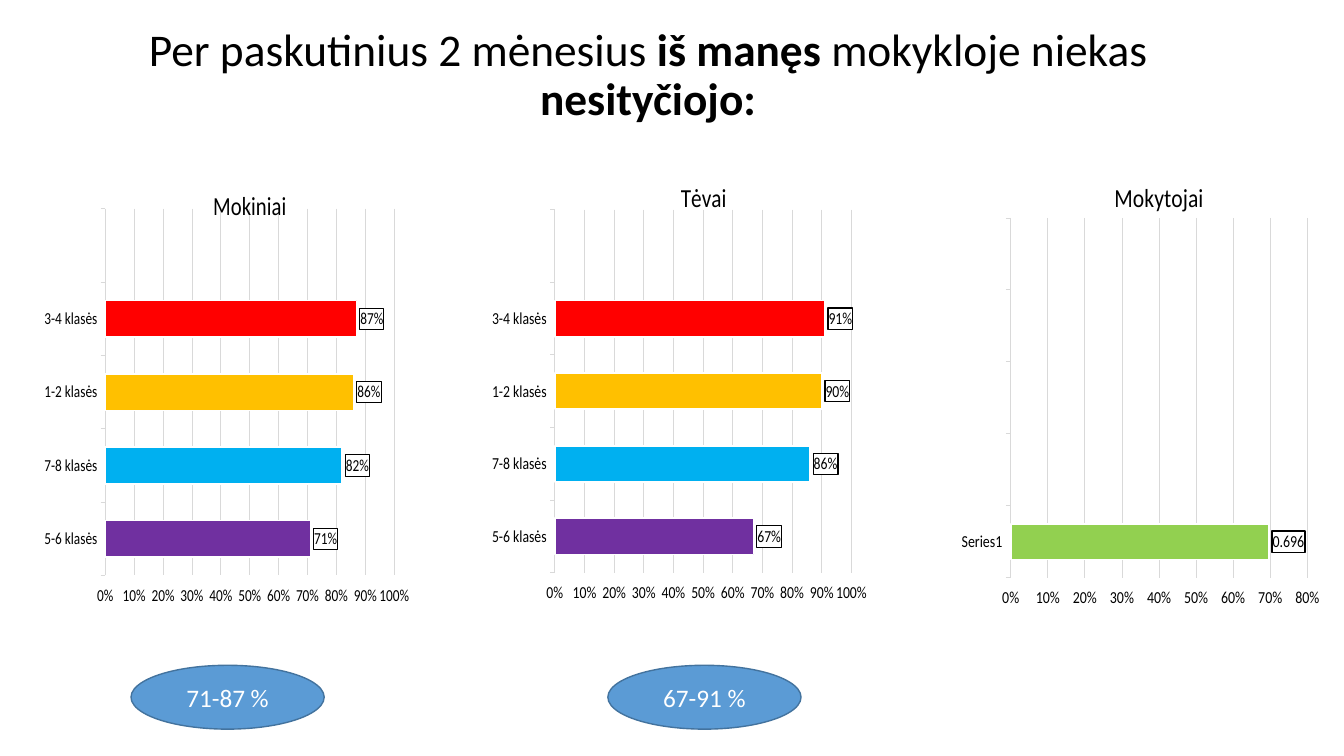
"""Build the slide on mockery at school with three bar charts."""
from lxml.etree import fromstring
from pptx import Presentation
from pptx.chart.data import CategoryChartData
from pptx.dml.color import RGBColor
from pptx.enum.chart import XL_CHART_TYPE, XL_LABEL_POSITION, XL_TICK_MARK
from pptx.enum.shapes import MSO_SHAPE
from pptx.enum.text import MSO_ANCHOR, MSO_AUTO_SIZE, PP_ALIGN
from pptx.util import Pt

FONT = "Calibri"
HEAD = [
    ("Per paskutinius 2 mėnesius ", False),
    ("iš manęs ", True),
    ("mokykloje niekas ", False),
    ("nesityčiojo:", True),
]
GRADES = ["5-6 klasės", "7-8 klasės", "1-2 klasės", "3-4 klasės", ""]
HUES = ["7030A0", "00B0F0", "FFC000", "FF0000"]
CHARTS = [
    dict(name="Mokiniai", cats=GRADES, vals=[0.71, 0.82, 0.86, 0.87, None],
         hues=HUES, top=1, form="0%", box=(31.7, 119.5, 260.6, 340.6),
         plot=(0, 0.087, 1, 0.769)),
    dict(name="Tėvai", cats=GRADES, vals=[0.67, 0.86, 0.9, 0.91, None],
         hues=HUES, top=1, form="0%", box=(351.4, 113.8, 267.8, 346.3),
         plot=(0.014, 0.104, 0.968, 0.749)),
    dict(name="Mokytojai", cats=["Series1", "", "", "", ""],
         vals=[0.696, None, None, None, None],
         hues=["92D050"], top=0.8, form="General",
         box=(686.9, 113.8, 255.6, 346.3), plot=(0, 0.121, 1, 0.742)),
]
OVALS = [("71-87 %", 93.6), ("67-91 %", 434.2)]
C_NS = "http://schemas.openxmlformats.org/drawingml/2006/chart"
A_NS = "http://schemas.openxmlformats.org/drawingml/2006/main"


def color(code):
    return RGBColor.from_string(code)


def style(font, size, code="000000", bold=False):
    font.name, font.size, font.bold = FONT, Pt(size), bold
    font.color.rgb = color(code)


def paint(part, fill, line, width):
    part.fill.solid()
    part.fill.fore_color.rgb = color(fill)
    part.line.color.rgb = color(line)
    part.line.width = Pt(width)


def set_plot(chart, plot):
    area = chart.element.find(f".//{{{C_NS}}}plotArea")
    for old in area.findall(f"{{{C_NS}}}layout"):
        area.remove(old)
    sizes = "".join(f'<c:{key} val="{val}"/>' for key, val in zip("xywh", plot))
    area.insert(0, fromstring(
        f'<c:layout xmlns:c="{C_NS}"><c:manualLayout>'
        '<c:layoutTarget val="inner"/><c:xMode val="edge"/><c:yMode val="edge"/>'
        f"{sizes}</c:manualLayout></c:layout>"))


def set_axis(axis):
    axis.major_tick_mark = XL_TICK_MARK.OUTSIDE
    axis.minor_tick_mark = XL_TICK_MARK.NONE
    style(axis.tick_labels.font, 12)
    axis.format.line.color.rgb = color("D9D9D9")
    axis.format.line.width = Pt(0.75)


def set_labels(plot, form):
    plot.has_data_labels = True
    labels = plot.data_labels
    labels.show_value = True
    labels.number_format, labels.number_format_is_linked = form, False
    labels.position = XL_LABEL_POSITION.OUTSIDE_END
    style(labels.font, 12)
    text = plot._element.find(f"{{{C_NS}}}dLbls/{{{C_NS}}}txPr")
    text.addprevious(fromstring(
        f'<c:spPr xmlns:c="{C_NS}" xmlns:a="{A_NS}">'
        '<a:solidFill><a:srgbClr val="FFFFFF"/></a:solidFill><a:ln w="12700">'
        '<a:solidFill><a:srgbClr val="000000"/></a:solidFill></a:ln></c:spPr>'))


def add_bars(slide, name, cats, vals, hues, top, form, box, plot):
    data = CategoryChartData()
    data.categories = cats
    data.add_series(name, vals)
    frame = slide.shapes.add_chart(
        XL_CHART_TYPE.BAR_CLUSTERED, *map(Pt, box), data)
    chart = frame.chart
    style(chart.font, 10)
    chart.has_legend = False
    chart.has_title = True
    run = chart.chart_title.text_frame.paragraphs[0].add_run()
    run.text = name
    style(run.font, 18.6)
    set_plot(chart, plot)

    set_axis(chart.category_axis)
    axis = chart.value_axis
    set_axis(axis)
    axis.format.line.fill.background()
    axis.minimum_scale, axis.maximum_scale, axis.major_unit = 0, top, 0.1
    axis.tick_labels.number_format = "0%"
    axis.tick_labels.number_format_is_linked = False
    grid = axis.major_gridlines.format.line
    grid.color.rgb, grid.width = color("D9D9D9"), Pt(0.75)

    bars = chart.plots[0]
    bars.gap_width, bars.vary_by_categories = 100, False
    series = bars.series[0]
    paint(series.format, hues[-1], "FFFFFF", 1.5)
    for spot, hue in enumerate(hues):
        paint(series.points[spot].format, hue, "FFFFFF", 1.5)
    set_labels(bars, form)


def add_title(slide):
    title = slide.shapes.title
    title.left, title.top, title.width, title.height = map(
        Pt, (61.2, 19.4, 803.5, 69.8))
    frame = title.text_frame
    frame.word_wrap, frame.auto_size = True, MSO_AUTO_SIZE.NONE
    frame.vertical_anchor = MSO_ANCHOR.MIDDLE
    para = frame.paragraphs[0]
    para.alignment, para.line_spacing = PP_ALIGN.CENTER, 0.9
    for text, bold in HEAD:
        run = para.add_run()
        run.text = text
        style(run.font, 32.4, bold=bold)


def add_oval(slide, text, left):
    oval = slide.shapes.add_shape(
        MSO_SHAPE.OVAL, Pt(left), Pt(475.2), Pt(138), Pt(45.6))
    oval.shadow.inherit = False
    paint(oval, "5B9BD5", "43739E", 1)
    oval.text_frame.vertical_anchor = MSO_ANCHOR.MIDDLE
    para = oval.text_frame.paragraphs[0]
    para.alignment = PP_ALIGN.CENTER
    run = para.add_run()
    run.text = text
    style(run.font, 18, "FFFFFF")


def main():
    deck = Presentation()
    deck.slide_width, deck.slide_height = Pt(960), Pt(540)
    slide = deck.slides.add_slide(deck.slide_layouts[5])
    add_title(slide)
    for chart in CHARTS:
        add_bars(slide, **chart)
    for text, left in OVALS:
        add_oval(slide, text, left)
    deck.save("out.pptx")


if __name__ == "__main__":
    main()
